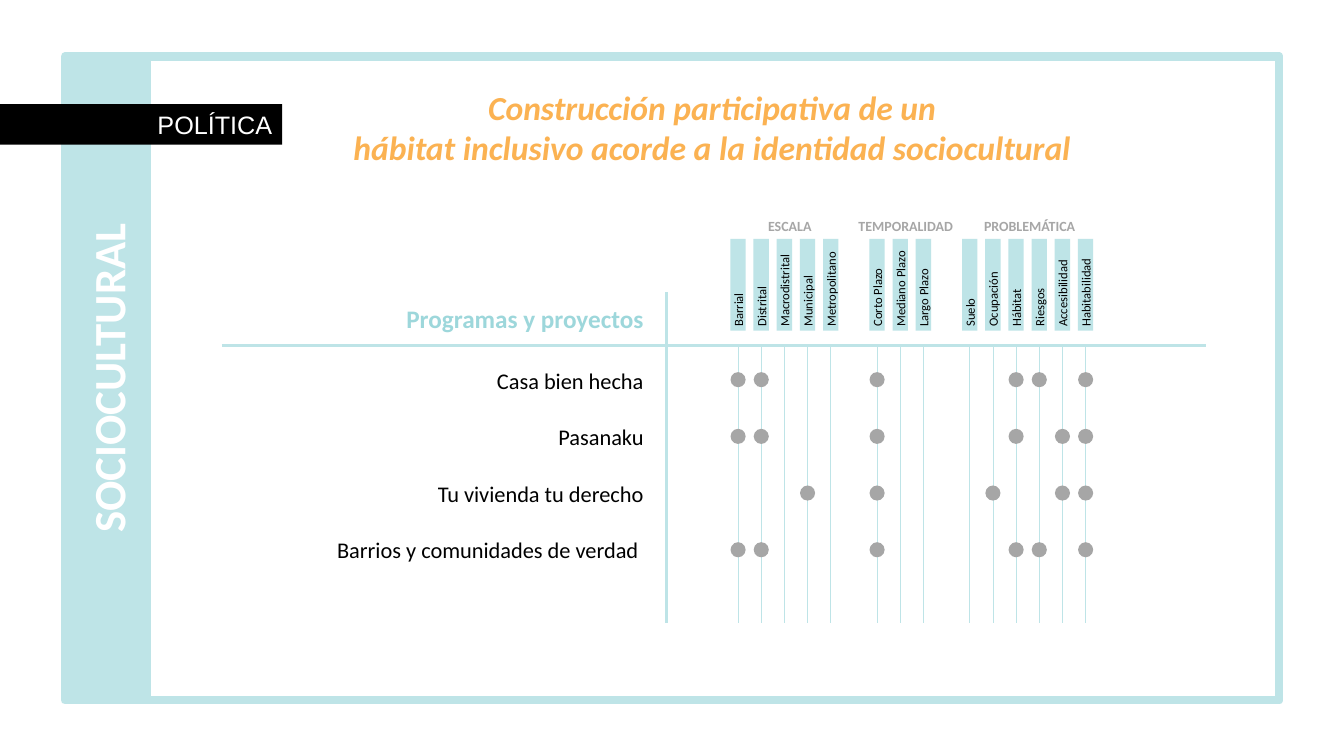
from pptx import Presentation
from pptx.dml.color import RGBColor
from pptx.enum.shapes import MSO_CONNECTOR, MSO_SHAPE
from pptx.enum.text import MSO_ANCHOR, PP_ALIGN
from pptx.util import Pt
from lxml import etree

RECT, OVAL = MSO_SHAPE.RECTANGLE, MSO_SHAPE.OVAL
LINE = MSO_CONNECTOR.STRAIGHT
MIDDLE = MSO_ANCHOR.MIDDLE
LEFT, CENTER, RIGHT = PP_ALIGN.LEFT, PP_ALIGN.CENTER, PP_ALIGN.RIGHT
NS = "http://schemas.openxmlformats.org/drawingml/2006/main"

HEX = {"aqua": "BEE4E7", "teal": "9DD7DB", "gold": "FBB252",
       "gray": "A6A6A6", "black": "000000", "white": "FFFFFF"}

prs = Presentation()
prs.slide_width, prs.slide_height = Pt(960), Pt(540)
slide = prs.slides.add_slide(prs.slide_layouts[6])
shapes = slide.shapes


def draw(kind, x, y, w, h, fill):
    """Add a flat shape without an outline."""
    shape = shapes.add_shape(kind, Pt(x), Pt(y), Pt(w), Pt(h))
    shape.shadow.inherit = False
    shape.fill.solid()
    shape.fill.fore_color.rgb = RGBColor.from_string(HEX[fill])
    shape.line.fill.background()
    return shape


def write(shape, text, size, color, align, bold=False, italic=False,
          face="Calibri", tight=False):
    frame = shape.text_frame
    frame.word_wrap = True
    if tight:
        frame.vertical_anchor = MIDDLE
        frame.margin_left = Pt(2.88)
        frame.margin_top = frame.margin_right = frame.margin_bottom = 0
    frame.text = text
    for par in frame.paragraphs:
        par.alignment = align
        font = par.font
        font.name, font.size = face, Pt(size)
        font.bold, font.italic = bold, italic
        font.color.rgb = RGBColor.from_string(HEX[color])


# Frame
for x, w, fill in [(46.3, 867.4, "aqua"), (104.9, 808.8, "white")]:
    panel = draw(RECT, x, 40.4, w, 459.8, fill)
    panel.line.color.rgb = RGBColor.from_string(HEX["aqua"])
    panel.line.width = Pt(6)

# Each column sits on an even grid; one slot is skipped between groups
groups = [
    ("ESCALA", 529.9, 65.5, ["Barrial", "Distrital", "Macrodistrital",
                             "Municipal", "Metropolitano"]),
    ("TEMPORALIDAD", 607, 77, ["Corto Plazo", "Mediano Plazo", "Largo Plazo"]),
    ("PROBLEMÁTICA", 695.5, 77, ["Suelo", "Ocupación", "Hábitat", "Riesgos",
                                 "Accesibilidad", "Habitabilidad"]),
]
START, STEP = 527.2, 16.55
cols = {}
slot = 0
for head, x, w, names in groups:
    for name in names:
        cols[name] = START + slot * STEP
        slot += 1
    slot += 1

# Guides and axes
rules = [(x, 246.3, x, 445, 0.5) for x in cols.values()]
rules += [(158.4, 247, 861.1, 247, 2.25), (475.9, 208.8, 475.9, 445, 2.25)]
for x1, y1, x2, y2, width in rules:
    rule = shapes.add_connector(LINE, Pt(x1), Pt(y1), Pt(x2), Pt(y2))
    rule.line.color.rgb = RGBColor.from_string(HEX["aqua"])
    rule.line.width = Pt(width)
    etree.SubElement(rule._element.spPr, f"{{{NS}}}effectLst")

# Column labels
for head, x, w, names in groups:
    title = shapes.add_textbox(Pt(x), Pt(155.5), Pt(w), Pt(12.2))
    write(title, head, 10, "gray", CENTER, bold=True, tight=True)
for name, x in cols.items():
    label = draw(RECT, x - 32.75, 197.9, 65.5, 11, "aqua")
    label.rotation = 270
    write(label, name, 9, "black", LEFT, tight=True)

# Projects and their marks
projects = [
    ("Casa bien hecha",
     ["Barrial", "Distrital", "Corto Plazo", "Hábitat", "Riesgos",
      "Habitabilidad"]),
    ("Pasanaku",
     ["Barrial", "Distrital", "Corto Plazo", "Hábitat", "Accesibilidad",
      "Habitabilidad"]),
    ("Tu vivienda tu derecho",
     ["Municipal", "Corto Plazo", "Ocupación", "Accesibilidad",
      "Habitabilidad"]),
    ("Barrios y comunidades de verdad ",
     ["Barrial", "Distrital", "Corto Plazo", "Hábitat", "Riesgos",
      "Habitabilidad"]),
]
title = shapes.add_textbox(Pt(69.8), Pt(213.1), Pt(397), Pt(29))
write(title, "Programas y proyectos", 18, "teal", RIGHT, bold=True)
for row, (name, marks) in enumerate(projects):
    entry = shapes.add_textbox(Pt(69.8), Pt(258.5 + row * 40.3),
                               Pt(397), Pt(26.6))
    write(entry, name, 16, "black", RIGHT)
    for mark in marks:
        draw(OVAL, cols[mark] - 5.4, 265.8 + row * 40.5, 10.8, 10.8, "gray")

# Titles
title = shapes.add_textbox(Pt(110.9), Pt(58.3), Pt(795.6), Pt(65.5))
write(title,
      "Construcción participativa de un\n"
      "hábitat inclusivo acorde a la identidad sociocultural",
      24, "gold", CENTER, bold=True, italic=True)
side = shapes.add_textbox(Pt(-193), Pt(247), Pt(540), Pt(46))
side.rotation = 270
write(side, "SOCIOCULTURAL", 32, "white", CENTER, bold=True)
tag = draw(RECT, 0, 74.4, 201.6, 29, "black")
write(tag, "POLÍTICA", 18, "white", RIGHT, face="Arial")

prs.save("out.pptx")
